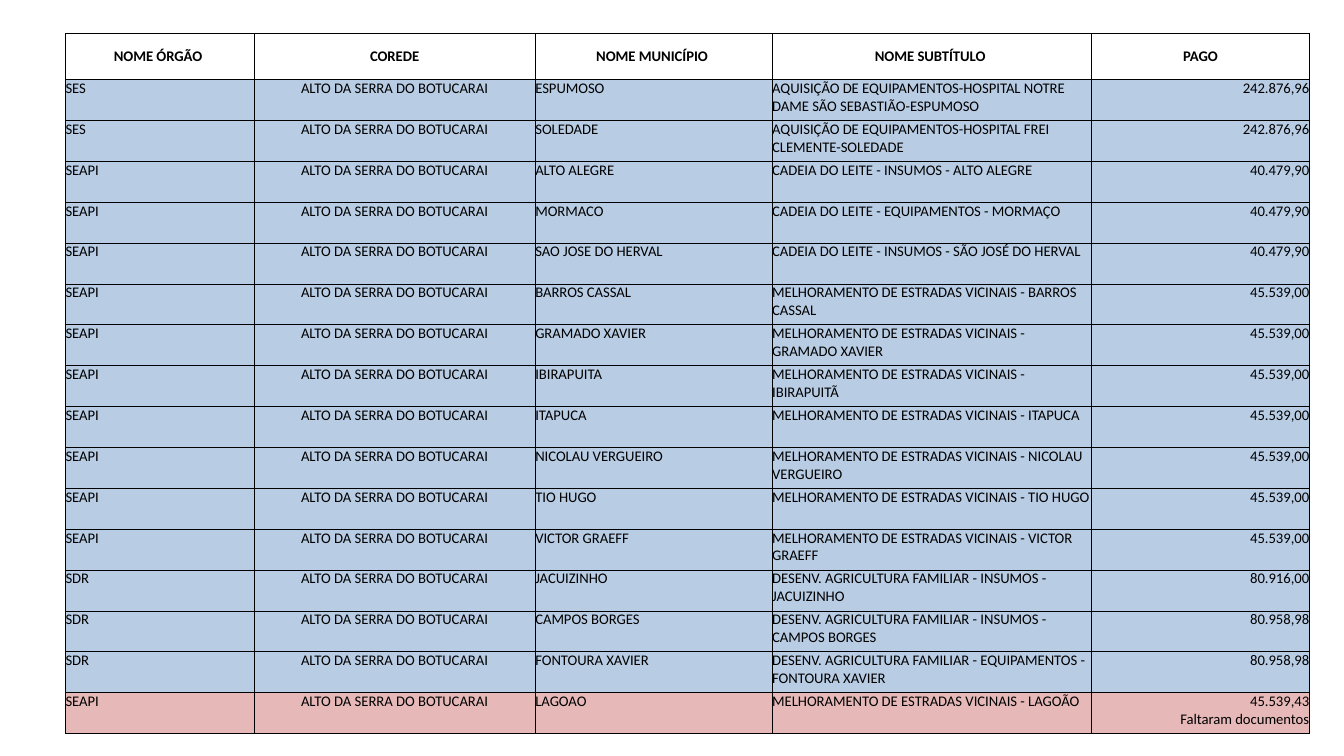
from dataclasses import dataclass
from typing import NamedTuple

from lxml import etree
from pptx import Presentation
from pptx.dml.color import RGBColor
from pptx.enum.text import MSO_ANCHOR, PP_ALIGN
from pptx.oxml.ns import qn
from pptx.util import Pt

LEFT, CENTER, RIGHT = PP_ALIGN.LEFT, PP_ALIGN.CENTER, PP_ALIGN.RIGHT
TOP, MIDDLE = MSO_ANCHOR.TOP, MSO_ANCHOR.MIDDLE


@dataclass(frozen=True)
class Theme:
    font: str = "Calibri"
    size: float = 10.5
    text: str = "000000"
    border: str = "000000"
    border_width: float = 0.5
    header: str = "FFFFFF"
    paid: str = "B8CCE4"
    pending: str = "E6B9B8"


class Column(NamedTuple):
    title: str
    width: float
    align: PP_ALIGN


class Payment(NamedTuple):
    agency: str
    city: str
    subtitle: str
    amount: str
    note: str = ""


THEME = Theme()
SLIDE_WIDTH, SLIDE_HEIGHT = 960, 540
TABLE_LEFT, TABLE_TOP = 46.8, 24
HEADER_HEIGHT, PAYMENT_HEIGHT = 32.8, 29.2
COREDE = "ALTO DA SERRA DO BOTUCARAI"
ROADS = "MELHORAMENTO DE ESTRADAS VICINAIS - "
FARMING = "DESENV. AGRICULTURA FAMILIAR - "
HOSPITAL = "AQUISIÇÃO DE EQUIPAMENTOS-HOSPITAL "
MILK = "CADEIA DO LEITE - "

COLUMNS = [
    Column("NOME ÓRGÃO ", 134.6, LEFT),
    Column("COREDE", 201, CENTER),
    Column("NOME MUNICÍPIO ", 169.2, LEFT),
    Column("NOME SUBTÍTULO ", 228.2, LEFT),
    Column("PAGO", 155.5, RIGHT),
]
PAYMENTS = [
    Payment("SES", "ESPUMOSO", HOSPITAL + "NOTRE DAME SÃO SEBASTIÃO-ESPUMOSO", "242.876,96"),
    Payment("SES", "SOLEDADE", HOSPITAL + "FREI CLEMENTE-SOLEDADE", "242.876,96"),
    Payment("SEAPI", "ALTO ALEGRE", MILK + "INSUMOS - ALTO ALEGRE", "40.479,90"),
    Payment("SEAPI", "MORMACO", MILK + "EQUIPAMENTOS - MORMAÇO", "40.479,90"),
    Payment("SEAPI", "SAO JOSE DO HERVAL", MILK + "INSUMOS - SÃO JOSÉ DO HERVAL", "40.479,90"),
    Payment("SEAPI", "BARROS CASSAL", ROADS + "BARROS CASSAL", "45.539,00"),
    Payment("SEAPI", "GRAMADO XAVIER", ROADS + "GRAMADO XAVIER", "45.539,00"),
    Payment("SEAPI", "IBIRAPUITA", ROADS + "IBIRAPUITÃ", "45.539,00"),
    Payment("SEAPI", "ITAPUCA", ROADS + "ITAPUCA", "45.539,00"),
    Payment("SEAPI", "NICOLAU VERGUEIRO", ROADS + "NICOLAU VERGUEIRO", "45.539,00"),
    Payment("SEAPI", "TIO HUGO", ROADS + "TIO HUGO", "45.539,00"),
    Payment("SEAPI", "VICTOR GRAEFF", ROADS + "VICTOR GRAEFF", "45.539,00"),
    Payment("SDR", "JACUIZINHO", FARMING + "INSUMOS - JACUIZINHO", "80.916,00"),
    Payment("SDR", "CAMPOS BORGES", FARMING + "INSUMOS - CAMPOS BORGES", "80.958,98"),
    Payment("SDR", "FONTOURA XAVIER", FARMING + "EQUIPAMENTOS - FONTOURA XAVIER", "80.958,98"),
    Payment("SEAPI", "LAGOAO", ROADS + "LAGOÃO", "45.539,43", "Faltaram documentos"),
]


def add_borders(cell) -> None:
    properties = cell._tc.get_or_add_tcPr()
    for side in ("a:lnL", "a:lnR", "a:lnT", "a:lnB"):
        line = etree.SubElement(properties, qn(side), w=str(Pt(THEME.border_width)))
        solid = etree.SubElement(line, qn("a:solidFill"))
        etree.SubElement(solid, qn("a:srgbClr"), val=THEME.border)


def fill_cell(cell, content: str, align: PP_ALIGN, color: str, is_header: bool) -> None:
    add_borders(cell)
    cell.fill.solid()
    cell.fill.fore_color.rgb = RGBColor.from_string(color)
    cell.margin_left = cell.margin_right = cell.margin_top = cell.margin_bottom = Pt(0)
    cell.vertical_anchor = MIDDLE if is_header else TOP
    paragraph = cell.text_frame.paragraphs[0]
    paragraph.text = content
    paragraph.alignment = align
    font = paragraph.font
    font.name, font.size, font.bold = THEME.font, Pt(THEME.size), is_header
    font.color.rgb = RGBColor.from_string(THEME.text)


def add_payment_table(slide) -> None:
    width = sum(column.width for column in COLUMNS)
    height = HEADER_HEIGHT + PAYMENT_HEIGHT * len(PAYMENTS)
    table = slide.shapes.add_table(
        len(PAYMENTS) + 1, len(COLUMNS), Pt(TABLE_LEFT), Pt(TABLE_TOP), Pt(width), Pt(height)
    ).table
    table.first_row = table.horz_banding = False
    table.rows[0].height = Pt(HEADER_HEIGHT)
    for index, column in enumerate(COLUMNS):
        table.columns[index].width = Pt(column.width)
        fill_cell(table.cell(0, index), column.title, CENTER, THEME.header, True)
    for row, payment in enumerate(PAYMENTS, start=1):
        table.rows[row].height = Pt(PAYMENT_HEIGHT)
        color = THEME.pending if payment.note else THEME.paid
        amount = f"{payment.amount}\n{payment.note}" if payment.note else payment.amount
        contents = (payment.agency, COREDE, payment.city, payment.subtitle, amount)
        for index, (column, content) in enumerate(zip(COLUMNS, contents)):
            fill_cell(table.cell(row, index), content, column.align, color, False)


def main() -> None:
    """Build the slide listing payments by agency and municipality."""
    presentation = Presentation()
    presentation.slide_width, presentation.slide_height = Pt(SLIDE_WIDTH), Pt(SLIDE_HEIGHT)
    add_payment_table(presentation.slides.add_slide(presentation.slide_layouts[6]))
    presentation.save("out.pptx")


if __name__ == "__main__":
    main()
